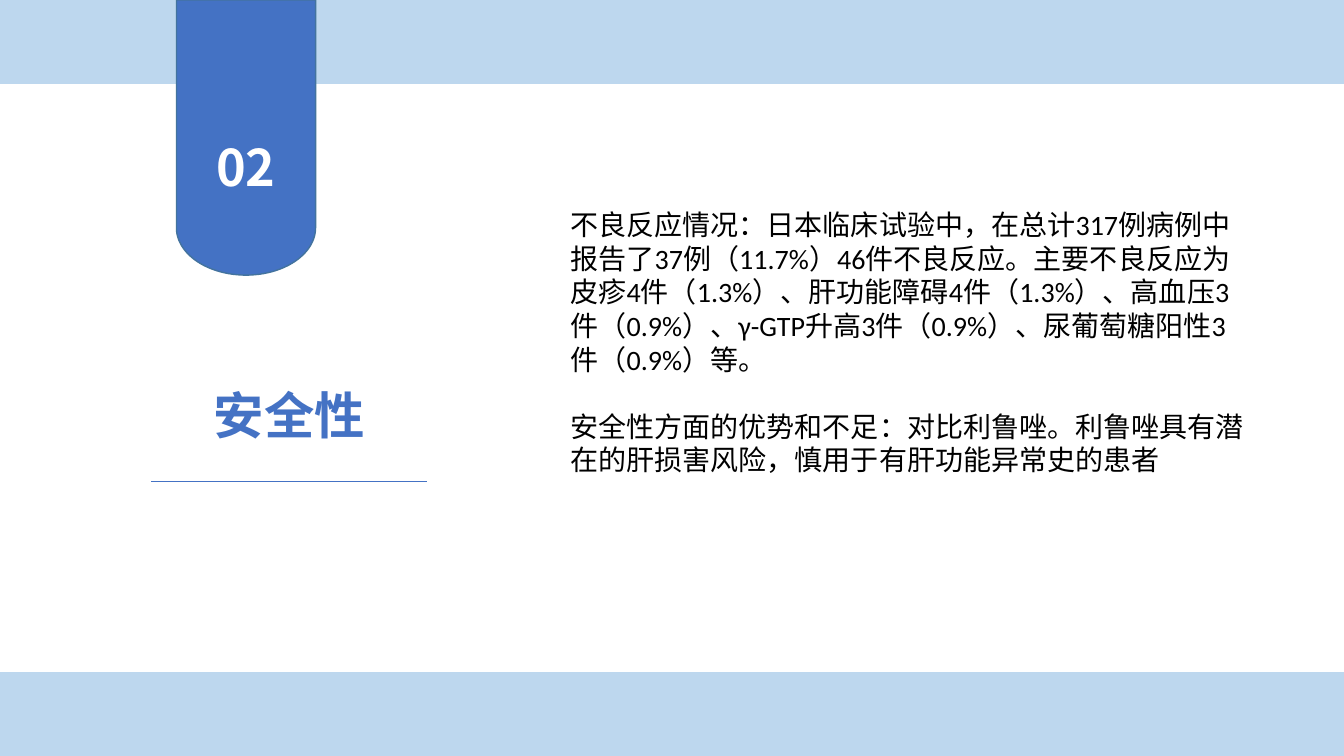
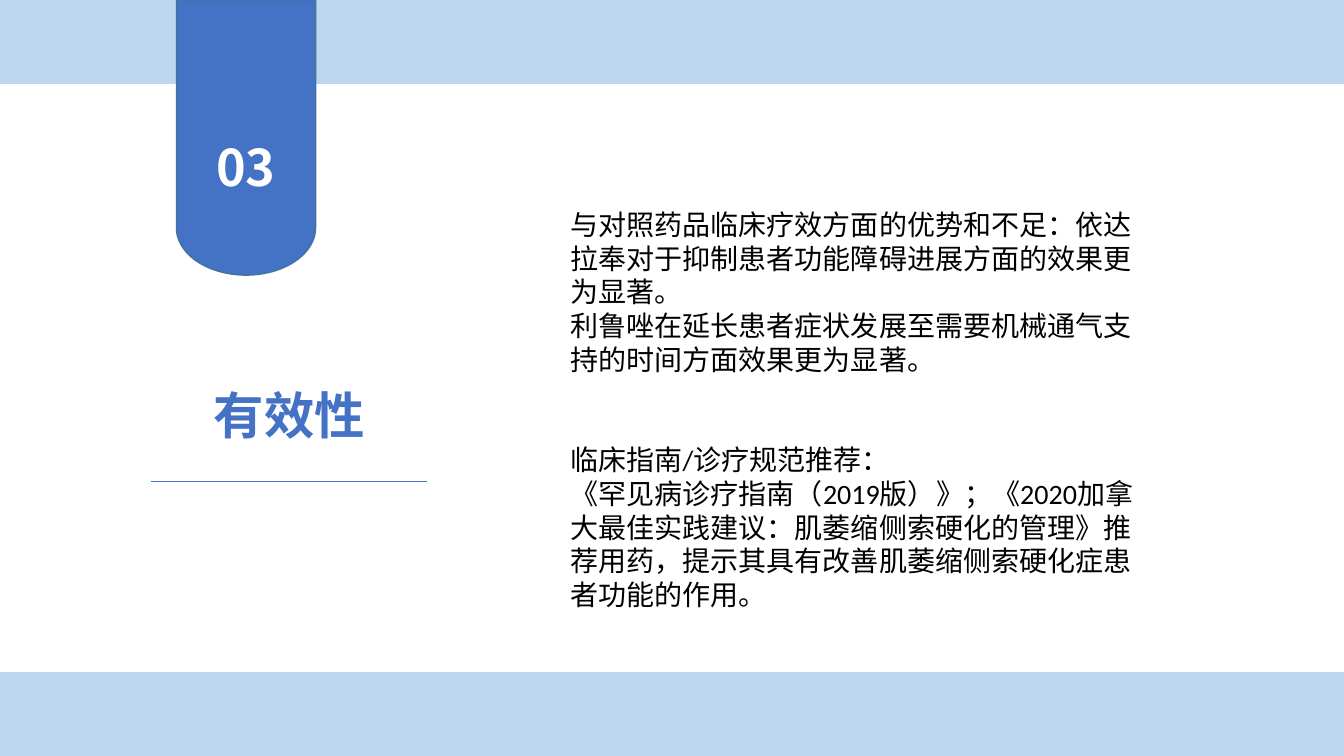
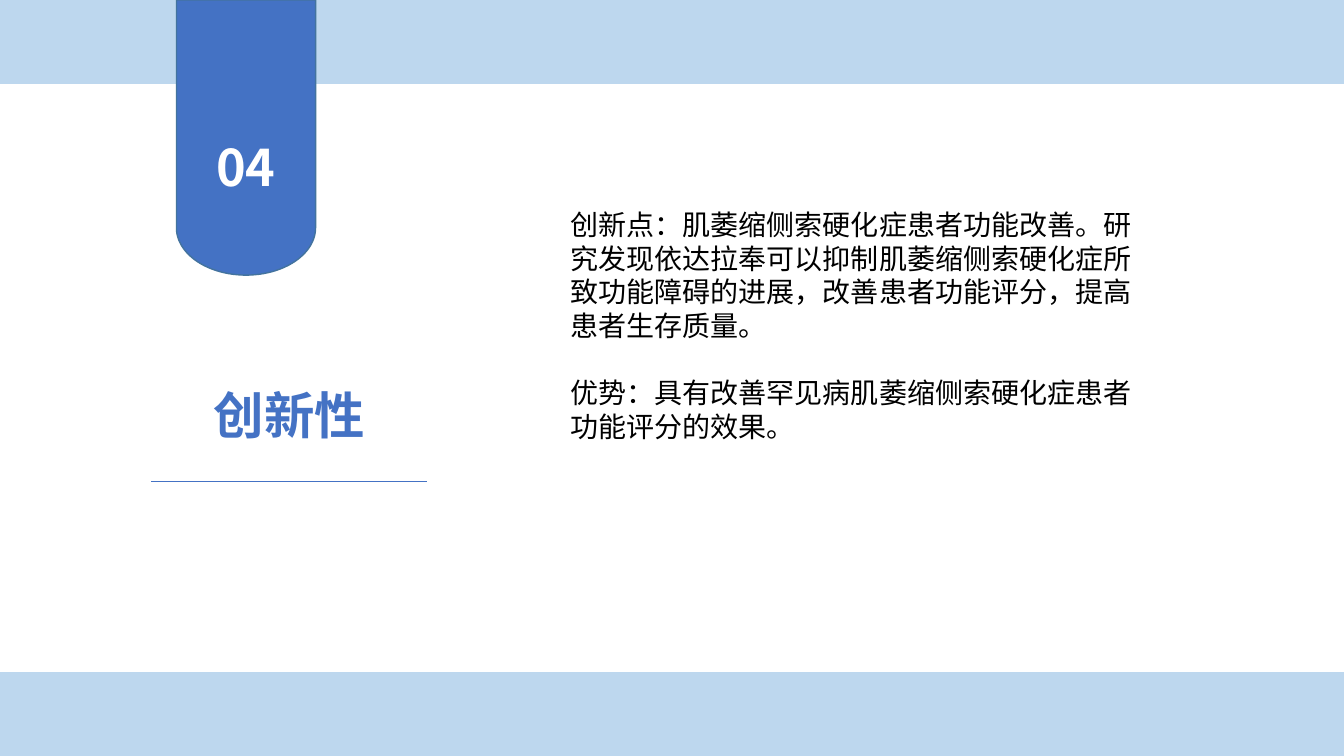
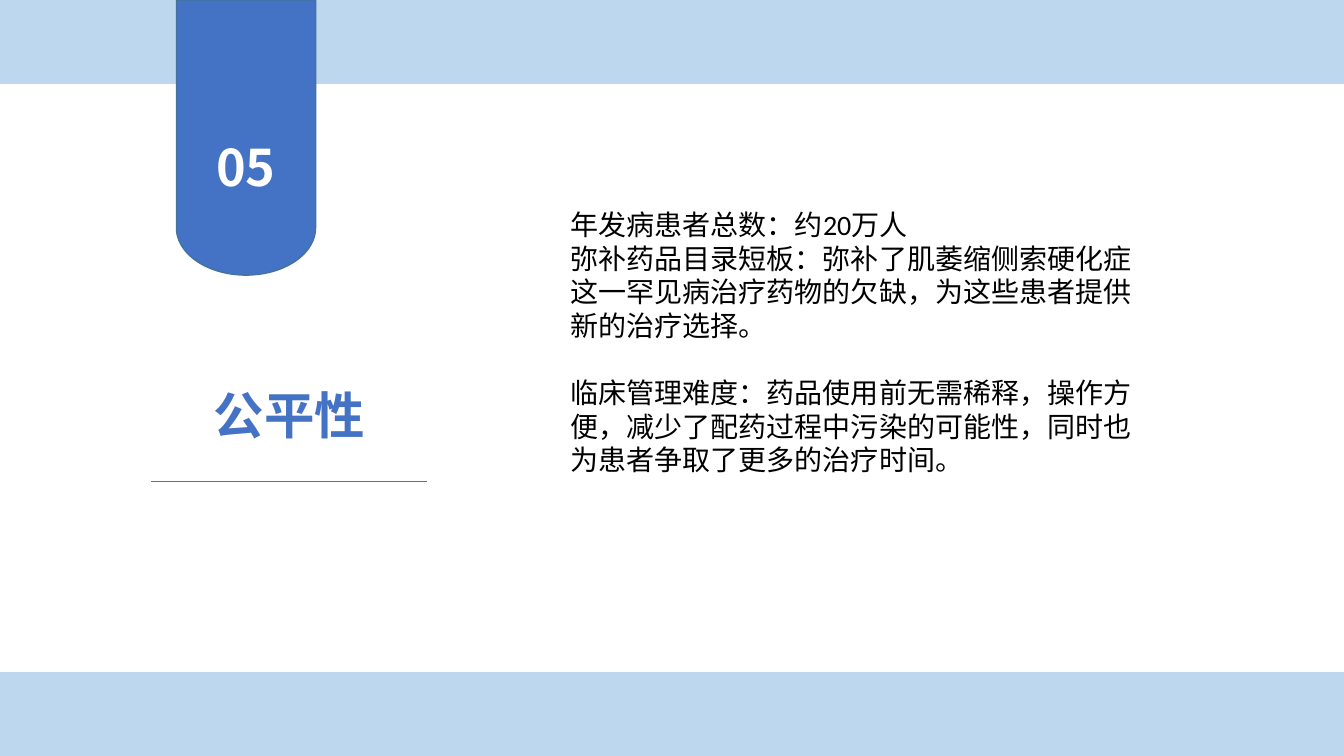
from math import cos, pi, sin

from pptx import Presentation
from pptx.dml.color import RGBColor
from pptx.enum.lang import MSO_LANGUAGE_ID as Lang
from pptx.enum.shapes import MSO_CONNECTOR as Connector, MSO_SHAPE as Shape
from pptx.enum.text import MSO_ANCHOR as Anchor, MSO_AUTO_SIZE as AutoSize, PP_ALIGN as Align
from pptx.oxml.ns import qn
from pptx.util import Inches, Pt

# Content: number, title, body width, paragraphs as (blank lines of space above, text)
SECTIONS = [
    ("02", "安全性", 6.94, [
        (0, "不良反应情况：日本临床试验中，在总计317例病例中报告了37例（11.7%）46件不良反应。"
            "主要不良反应为皮疹4件（1.3%）、肝功能障碍4件（1.3%）、高血压3件（0.9%）、"
            "γ-GTP升高3件（0.9%）、尿葡萄糖阳性3件（0.9%）等。"),
        (1, "安全性方面的优势和不足：对比利鲁唑。利鲁唑具有潜在的肝损害风险，慎用于有肝功能异常史的患者"),
    ]),
    ("03", "有效性", 6, [
        (0, "与对照药品临床疗效方面的优势和不足：依达拉奉对于抑制患者功能障碍进展方面的效果更为显著。"),
        (0, "利鲁唑在延长患者症状发展至需要机械通气支持的时间方面效果更为显著。"),
        (2, "临床指南/诊疗规范推荐："),
        (0, "《罕见病诊疗指南（2019版）》；《2020加拿大最佳实践建议：肌萎缩侧索硬化的管理》"
            "推荐用药，提示其具有改善肌萎缩侧索硬化症患者功能的作用。"),
    ]),
    ("04", "创新性", 6, [
        (0, "创新点：肌萎缩侧索硬化症患者功能改善。研究发现依达拉奉可以抑制肌萎缩侧索硬化症所致"
            "功能障碍的进展，改善患者功能评分，提高患者生存质量。"),
        (1, "优势：具有改善罕见病肌萎缩侧索硬化症患者功能评分的效果。"),
    ]),
    ("05", "公平性", 6, [
        (0, "年发病患者总数：约20万人"),
        (0, "弥补药品目录短板：弥补了肌萎缩侧索硬化症这一罕见病治疗药物的欠缺，为这些患者提供新的治疗选择。"),
        (1, "临床管理难度：药品使用前无需稀释，操作方便，减少了配药过程中污染的可能性，"
            "同时也为患者争取了更多的治疗时间。"),
    ]),
]

# Shared style
BLUE, EDGE, PALE, WHITE, BLACK = "4472C4", "43739E", "BDD7EE", "FFFFFF", "000000"
LATIN, CJK = "Calibri", "Noto Sans CJK SC"
SLIDE_W, SLIDE_H, BAND_H = 13.33, 7.5, 0.83
BODY_LINE = 24  # points per line of 20 pt body text


def rgb(value):
    return RGBColor.from_string(value)


def paint(sp, fill, line):
    sp.shadow.inherit = False
    sp.fill.solid()
    sp.fill.fore_color.rgb = rgb(fill)
    sp.line.color.rgb = rgb(line)
    sp.line.width = Pt(1)


def add_band(slide, top):
    sp = slide.shapes.add_shape(Shape.RECTANGLE, 0, Inches(top),
                                Inches(SLIDE_W), Inches(BAND_H))
    paint(sp, PALE, PALE)


def add_ribbon(slide):
    """Vertical tab hanging from the top edge, ending in a half ellipse."""
    left, right, straight, bottom, steps = 1.75, 3.13, 2.26, 2.73, 48
    mid, rx, ry = (left + right) / 2, (right - left) / 2, bottom - straight
    arc = [(mid + rx * cos(pi * i / steps), straight + ry * sin(pi * i / steps))
           for i in range(steps + 1)]
    outline = [(Inches(x), Inches(y)) for x, y in [(right, 0), *arc]]
    fb = slide.shapes.build_freeform(Inches(left), 0)
    fb.add_line_segments(outline, close=True)
    paint(fb.convert_to_shape(), BLUE, EDGE)


def add_text(slide, box, paragraphs, size, color, font=LATIN, bold=False,
             align=Align.LEFT, wrap=True):
    sp = slide.shapes.add_textbox(*map(Inches, box))
    tf = sp.text_frame
    tf.word_wrap = wrap
    tf.auto_size = AutoSize.SHAPE_TO_FIT_TEXT
    tf.vertical_anchor = Anchor.TOP
    for i, (blank_lines, text) in enumerate(paragraphs):
        p = tf.add_paragraph() if i else tf.paragraphs[0]
        p.alignment = align
        p.space_before = Pt(blank_lines * BODY_LINE)
        r = p.add_run()
        r.text = text
        f = r.font
        f.name, f.size, f.bold = font, Pt(size), bold
        f.color.rgb = rgb(color)
        f.language_id = Lang.SIMPLIFIED_CHINESE
        # East Asian typeface follows the Latin one
        ea = r._r.get_or_add_rPr().makeelement(qn("a:ea"), {"typeface": CJK})
        r._r.rPr.append(ea)


def add_divider(slide):
    line = slide.shapes.add_connector(Connector.STRAIGHT, Inches(1.5), Inches(4.78),
                                      Inches(4.24), Inches(4.78))
    line.line.color.rgb = rgb(BLUE)
    line.line.width = Pt(0.5)
    props = line._element.spPr
    props.append(props.makeelement(qn("a:effectLst"), {}))


def add_section(prs, number, title, body_width, paragraphs):
    slide = prs.slides.add_slide(prs.slide_layouts[6])
    for top in (0, SLIDE_H - BAND_H):
        add_band(slide, top)
    add_ribbon(slide)
    add_text(slide, (2.01, 1.3, 0.86, 0.71), [(0, number)], 36, WHITE,
             font=CJK, bold=True, align=Align.CENTER)
    body_lines = 7
    add_text(slide, (5.56, 2.01, body_width, body_lines * BODY_LINE / 72 + 0.1),
             paragraphs, 20, BLACK)
    add_text(slide, (2.02, 3.76, 1.7, 0.71), [(0, title)], 36, BLUE,
             bold=True, align=Align.CENTER, wrap=False)
    add_divider(slide)


def main():
    prs = Presentation()
    prs.slide_width, prs.slide_height = Inches(SLIDE_W), Inches(SLIDE_H)
    for section in SECTIONS:
        add_section(prs, *section)
    prs.save("out.pptx")


if __name__ == "__main__":
    main()
